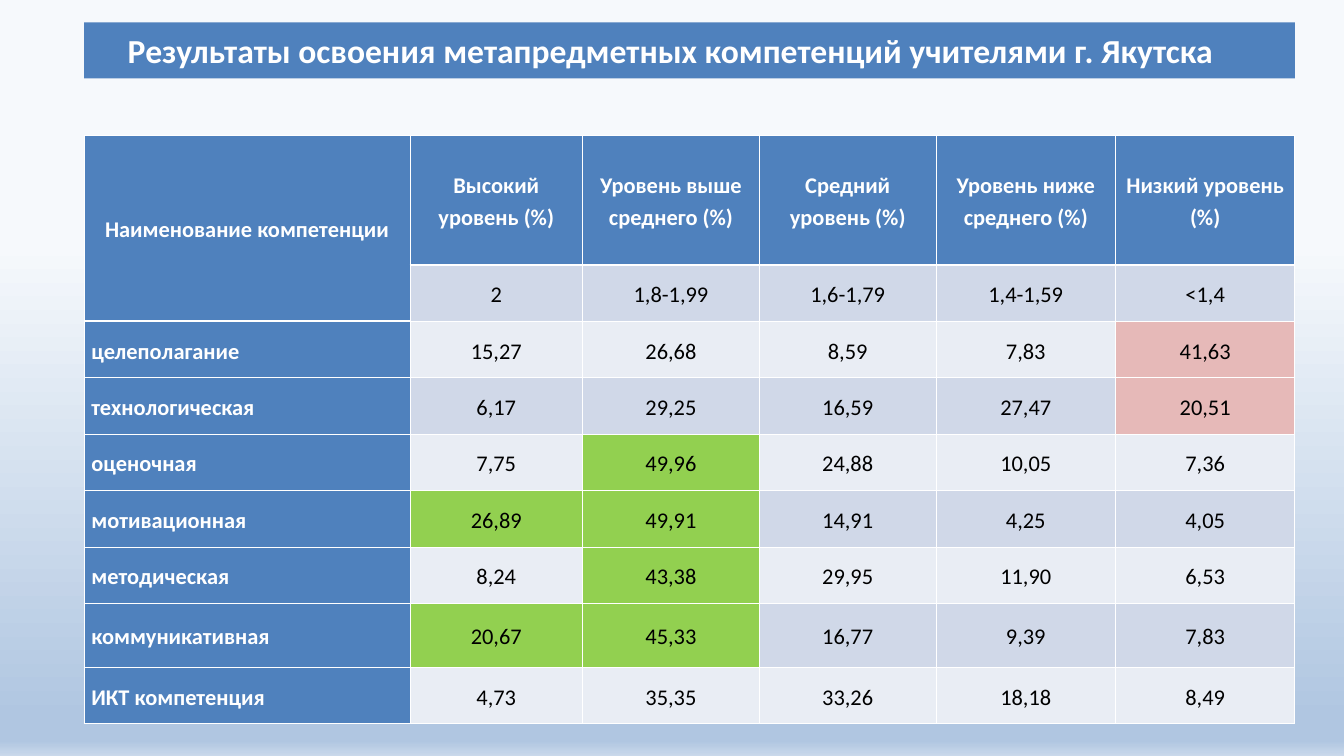
from typing import NamedTuple

from lxml import etree
from pptx import Presentation
from pptx.dml.color import RGBColor
from pptx.enum.text import MSO_ANCHOR, MSO_AUTO_SIZE, PP_ALIGN
from pptx.oxml.ns import qn
from pptx.util import Inches, Pt

MIDDLE = MSO_ANCHOR.MIDDLE
FIT_SHAPE = MSO_AUTO_SIZE.SHAPE_TO_FIT_TEXT
LEFT, CENTER, JUSTIFY = PP_ALIGN.LEFT, PP_ALIGN.CENTER, PP_ALIGN.JUSTIFY

WHITE = RGBColor(0xFF, 0xFF, 0xFF)
BLACK = RGBColor(0x00, 0x00, 0x00)
BLUE = RGBColor(0x4F, 0x81, 0xBD)
DARK_BAND = RGBColor(0xD0, 0xD8, 0xE8)
LIGHT_BAND = RGBColor(0xE9, 0xED, 0xF4)
GREEN = RGBColor(0x92, 0xD0, 0x50)
PINK = RGBColor(0xE6, 0xB9, 0xB8)
SKY_STOPS = [
    (32, RGBColor(0xF6, 0xF9, 0xFC)),
    (95, RGBColor(0xB0, 0xC6, 0xE1)),
    (98, RGBColor(0xB0, 0xC6, 0xE1)),
    (100, RGBColor(0xCA, 0xD9, 0xEB)),
]

FONT = "Calibri"
SLIDE_WIDTH, SLIDE_HEIGHT = 20, 11.25
MARGIN = 1.25
TITLE_TOP, TITLE_HEIGHT, TITLE_INDENT = 0.4, 0.7, 0.55
TABLE_TOP = 2.01
COLUMN_WIDTHS = [4.85, 2.57, 2.63, 2.63, 2.67, 2.67]
ROW_HEIGHTS = [1.93] + [0.84] * 6 + [0.95, 0.84]
CONTENT_WIDTH = sum(COLUMN_WIDTHS)
CELL_INSET = 0.11
THIN, THICK = 1, 3

TITLE = "Результаты освоения метапредметных компетенций учителями г. Якутска"


class TableRow(NamedTuple):
    name: str
    values: list[str]
    highlights: dict[int, RGBColor] = {}


ROWS = [
    TableRow("Наименование компетенции", [
        "Высокий уровень (%)", "Уровень выше среднего (%)", "Средний уровень (%)",
        "Уровень ниже среднего (%)", "Низкий уровень (%)"]),
    TableRow("", ["2", "1,8-1,99", "1,6-1,79", "1,4-1,59", "<1,4"]),
    TableRow("целеполагание", ["15,27", "26,68", "8,59", "7,83", "41,63"], {5: PINK}),
    TableRow("технологическая", ["6,17", "29,25", "16,59", "27,47", "20,51"], {5: PINK}),
    TableRow("оценочная", ["7,75", "49,96", "24,88", "10,05", "7,36"], {2: GREEN}),
    TableRow("мотивационная", ["26,89", "49,91", "14,91", "4,25", "4,05"],
             {1: GREEN, 2: GREEN}),
    TableRow("методическая", ["8,24", "43,38", "29,95", "11,90", "6,53"], {2: GREEN}),
    TableRow("коммуникативная", ["20,67", "45,33", "16,77", "9,39", "7,83"],
             {1: GREEN, 2: GREEN}),
    TableRow("ИКТ компетенция", ["4,73", "35,35", "33,26", "18,18", "8,49"]),
]


def paint_background(slide) -> None:
    fill = slide.background.fill
    fill.gradient()
    fill.gradient_angle = 270
    stop_list = slide.element.find(".//" + qn("a:gsLst"))
    for stop in list(stop_list):
        stop_list.remove(stop)
    for percent, color in SKY_STOPS:
        stop = etree.SubElement(stop_list, qn("a:gs"), pos=str(percent * 1000))
        etree.SubElement(stop, qn("a:srgbClr"), val=str(color))


def set_font(paragraph, size: int, color: RGBColor, bold: bool) -> None:
    font = paragraph.font
    font.name, font.size, font.bold = FONT, Pt(size), bold
    font.color.rgb = color


def add_title(slide) -> None:
    title = slide.shapes.title
    title.left, title.top = Inches(MARGIN), Inches(TITLE_TOP)
    title.width, title.height = Inches(CONTENT_WIDTH), Inches(TITLE_HEIGHT)
    title.fill.solid()
    title.fill.fore_color.rgb = BLUE
    frame = title.text_frame
    frame.text = TITLE
    frame.word_wrap = True
    frame.auto_size = FIT_SHAPE
    frame.vertical_anchor = MIDDLE
    paragraph = frame.paragraphs[0]
    paragraph.alignment = LEFT
    set_font(paragraph, 36, WHITE, True)
    paragraph_properties = paragraph._p.get_or_add_pPr()
    paragraph_properties.set("marL", "0")
    paragraph_properties.set("indent", str(Inches(TITLE_INDENT)))


def set_borders(cell, top: int, bottom: int) -> None:
    """Draw white cell borders; widths are in points."""
    properties = cell._tc.get_or_add_tcPr()
    for side, width in (("L", THIN), ("R", THIN), ("T", top), ("B", bottom)):
        line = etree.SubElement(properties, qn(f"a:ln{side}"), w=str(Pt(width)))
        fill = etree.SubElement(line, qn("a:solidFill"))
        etree.SubElement(fill, qn("a:srgbClr"), val=str(WHITE))


def format_cell(cell, text: str, fill: RGBColor, alignment: PP_ALIGN) -> None:
    cell.fill.solid()
    cell.fill.fore_color.rgb = fill
    cell.vertical_anchor = MIDDLE
    cell.margin_left = cell.margin_right = Inches(CELL_INSET)
    cell.margin_top = cell.margin_bottom = 0
    cell.text = text
    paragraph = cell.text_frame.paragraphs[0]
    paragraph.alignment = alignment
    paragraph.line_spacing = 1.15
    paragraph.space_after = Pt(15)
    on_blue = fill == BLUE
    set_font(paragraph, 24, WHITE if on_blue else BLACK, on_blue)


def add_results_table(slide) -> None:
    table = slide.shapes.add_table(
        len(ROWS), len(COLUMN_WIDTHS), Inches(MARGIN), Inches(TABLE_TOP),
        Inches(CONTENT_WIDTH), Inches(sum(ROW_HEIGHTS))).table
    table.first_row = table.horz_banding = False
    for column, width in zip(table.columns, COLUMN_WIDTHS):
        column.width = Inches(width)
    for row, height in zip(table.rows, ROW_HEIGHTS):
        row.height = Inches(height)
    table.cell(0, 0).merge(table.cell(1, 0))

    for row_index, row in enumerate(ROWS):
        band = DARK_BAND if row_index % 2 else LIGHT_BAND
        for column_index, text in enumerate([row.name, *row.values]):
            cell = table.cell(row_index, column_index)
            is_label = row_index == 0 or column_index == 0
            fill = BLUE if is_label else row.highlights.get(column_index, band)
            is_name = column_index == 0 and row_index > 0
            set_borders(cell,
                        top=THICK if row_index == 1 and not is_label else THIN,
                        bottom=THICK if row_index == 0 else THIN)
            format_cell(cell, text, fill, JUSTIFY if is_name else CENTER)


def main() -> None:
    presentation = Presentation()
    presentation.slide_width = Inches(SLIDE_WIDTH)
    presentation.slide_height = Inches(SLIDE_HEIGHT)
    slide = presentation.slides.add_slide(
        presentation.slide_layouts.get_by_name("Title Only"))
    paint_background(slide)
    add_title(slide)
    add_results_table(slide)
    presentation.save("out.pptx")


if __name__ == "__main__":
    main()
